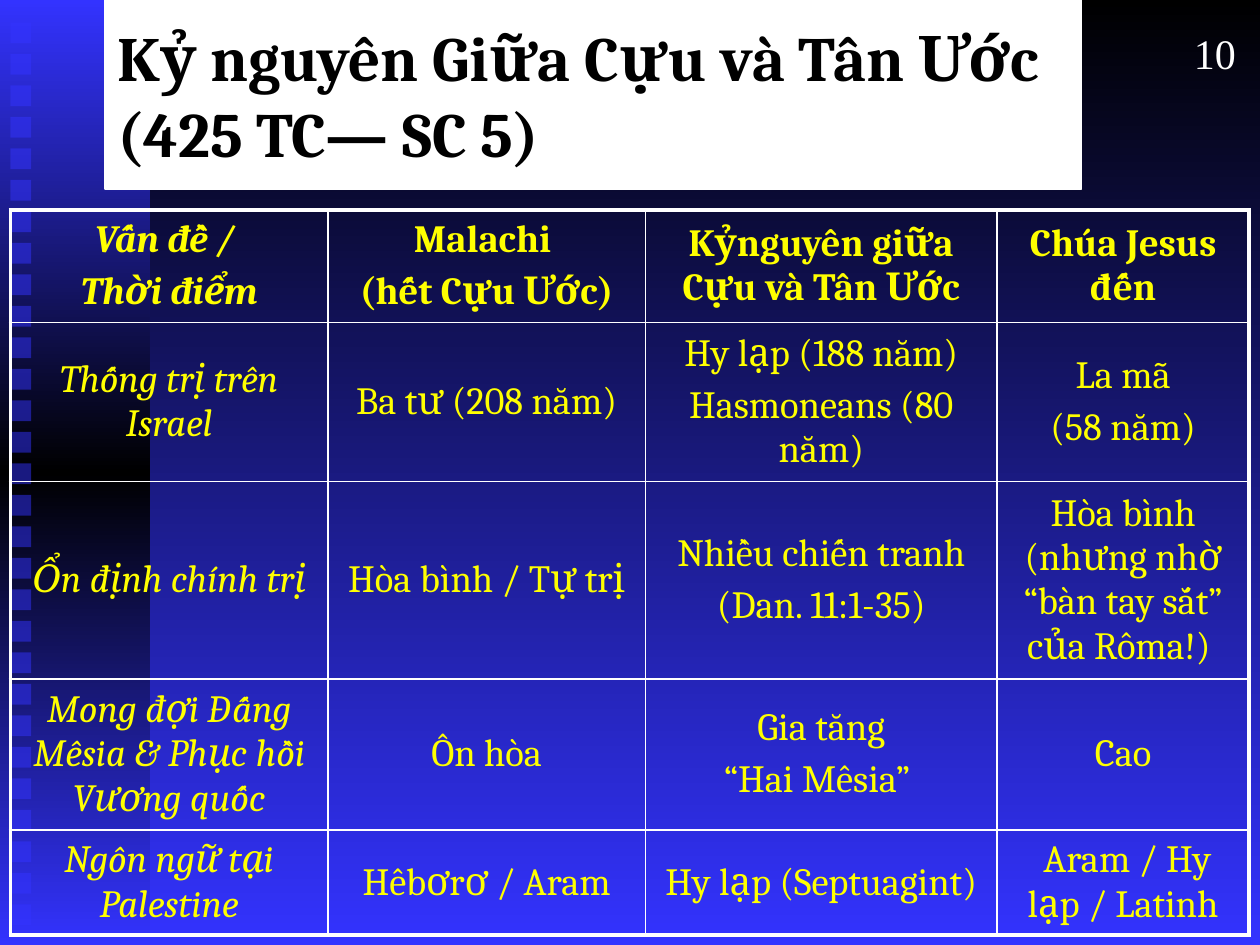
from copy import deepcopy

from lxml import etree
from pptx import Presentation
from pptx import util as u
from pptx.dml.color import RGBColor
from pptx.enum import shapes, text
from pptx.oxml.ns import qn

COLORS = {"black": "000000", "blue": "3333FF", "white": "FFFFFF", "yellow": "FFFF00"}
RGB = {name: RGBColor.from_string(value) for name, value in COLORS.items()}


def paint_gradient(fill, element, names):
    """Fill from top to bottom with evenly spaced colours."""
    fill.gradient()
    fill.gradient_angle = 270
    stop_list = element.find(".//" + qn("a:gsLst"))
    while len(stop_list) < len(names):
        stop_list.append(deepcopy(stop_list[0]))
    for i, (stop, name) in enumerate(zip(fill.gradient_stops, names)):
        stop.position = i / (len(names) - 1)
        stop.color.rgb = RGB[name]


def add_border(cell, side, width):
    ln = etree.SubElement(cell._tc.get_or_add_tcPr(), qn("a:ln" + side), w=str(u.Pt(width)))
    fill = etree.SubElement(ln, qn("a:solidFill"))
    etree.SubElement(fill, qn("a:srgbClr"), val=COLORS["white"])


prs = Presentation()
prs.slide_width, prs.slide_height = u.Cm(25.4), u.Cm(19.05)
s = prs.slides.add_slide(prs.slide_layouts[6])
paint_gradient(s.background.fill, s.element, ["black", "blue"])

# Left strip with its column of squares
strip = s.shapes.add_shape(shapes.MSO_SHAPE.RECTANGLE, 0, 0, u.Cm(3.02), prs.slide_height)
strip.shadow.inherit = False
strip.line.fill.background()
paint_gradient(strip.fill, strip.element, ["blue", "black", "blue"])

SQUARES = 29
pitch = 17.78 / (SQUARES - 1)
for i in range(SQUARES):
    sp = s.shapes.add_shape(shapes.MSO_SHAPE.RECTANGLE, u.Cm(0.21), u.Cm(0.45 + i * pitch),
                            u.Cm(0.42), u.Cm(0.42))
    sp.shadow.inherit = False
    sp.line.fill.background()
    sp.fill.solid()
    sp.fill.fore_color.rgb = RGB["blue"]
    etree.SubElement(sp.element.find(".//" + qn("a:srgbClr")), qn("a:alpha"), val="50000")

# Title
title = s.shapes.add_textbox(u.Cm(2.12), 0, u.Cm(19.69), u.Cm(3.81))
title.fill.solid()
title.fill.fore_color.rgb = RGB["white"]
title.line.color.rgb = RGB["white"]
title.line.width = u.Pt(0.75)
tf = title.text_frame
tf.word_wrap = True
tf.vertical_anchor = text.MSO_ANCHOR.MIDDLE
tf.text = "Kỷ nguyên Giữa Cựu và Tân Ước \v(425 TC— SC 5)"
for r in tf.paragraphs[0].runs:
    r.font.name, r.font.size, r.font.bold = "Cambria", u.Pt(36), True
    r.font.color.rgb = RGB["black"]

# Comparison table; rows grow to fit their text
rows = [
    ["Vấn đề / \nThời điểm", "Malachi \n(hết Cựu Ước)",
     "Kỷnguyên giữa Cựu và Tân Ước", "Chúa Jesus đến"],
    ["Thống trị trên Israel", "Ba tư (208 năm)",
     "Hy lạp (188 năm)\nHasmoneans (80 năm)", "La mã\n(58 năm)"],
    ["Ổn định chính trị", "Hòa bình / Tự trị",
     "Nhiều chiến tranh\n(Dan. 11:1-35)", "Hòa bình (nhưng nhờ “bàn tay sắt” của Rôma!) "],
    ["Mong đợi Đấng Mêsia & Phục hồi Vương quốc", "Ôn hòa",
     "Gia tăng\n“Hai Mêsia” ", "Cao"],
    ["Ngôn ngữ tại Palestine", "Hêbơrơ / Aram",
     "Hy lạp (Septuagint)", " Aram / Hy lạp / Latinh"],
]
col_widths = [6.4, 6.4, 7.09, 5.08]
row_heights = [1.6] + [1.9] * 4
last_row, last_col = len(rows) - 1, len(col_widths) - 1
frame = s.shapes.add_table(len(rows), len(col_widths), u.Cm(0.21), u.Cm(4.23),
                           u.Cm(sum(col_widths)), u.Cm(sum(row_heights)))
table = frame.table
table.first_row = table.horz_banding = False
for col, width in zip(table.columns, col_widths):
    col.width = u.Cm(width)
for row, height in zip(table.rows, row_heights):
    row.height = u.Cm(height)
frame.height = u.Cm(14.68)

for i, row in enumerate(rows):
    for j, words in enumerate(row):
        cell = table.cell(i, j)
        outer_sides = {"L": j == 0, "R": j == last_col, "T": i == 0, "B": i == last_row}
        for side, outer in outer_sides.items():
            add_border(cell, side, 2.25 if outer else 1)
        cell.fill.background()
        cell.vertical_anchor = text.MSO_ANCHOR.MIDDLE
        cell.text_frame.text = words
        for p in cell.text_frame.paragraphs:
            p.alignment = text.PP_ALIGN.CENTER
            p.space_before = u.Pt(4.4)
            font = p.runs[0].font
            font.name, font.size = "Cambria", u.Pt(22)
            font.bold, font.italic = i == 0, j == 0
            font.color.rgb = RGB["yellow"]

# Page number
number = s.shapes.add_textbox(u.Cm(23.69), u.Cm(0.42), u.Cm(1.6), u.Cm(1.27))
tf = number.text_frame
tf.word_wrap = False
tf.auto_size = text.MSO_AUTO_SIZE.SHAPE_TO_FIT_TEXT
tf.text = "10"
p = tf.paragraphs[0]
p.alignment = text.PP_ALIGN.CENTER
font = p.runs[0].font
font.name, font.size = "Times New Roman", u.Pt(24)
font.color.rgb = RGB["white"]

prs.save("out.pptx")
